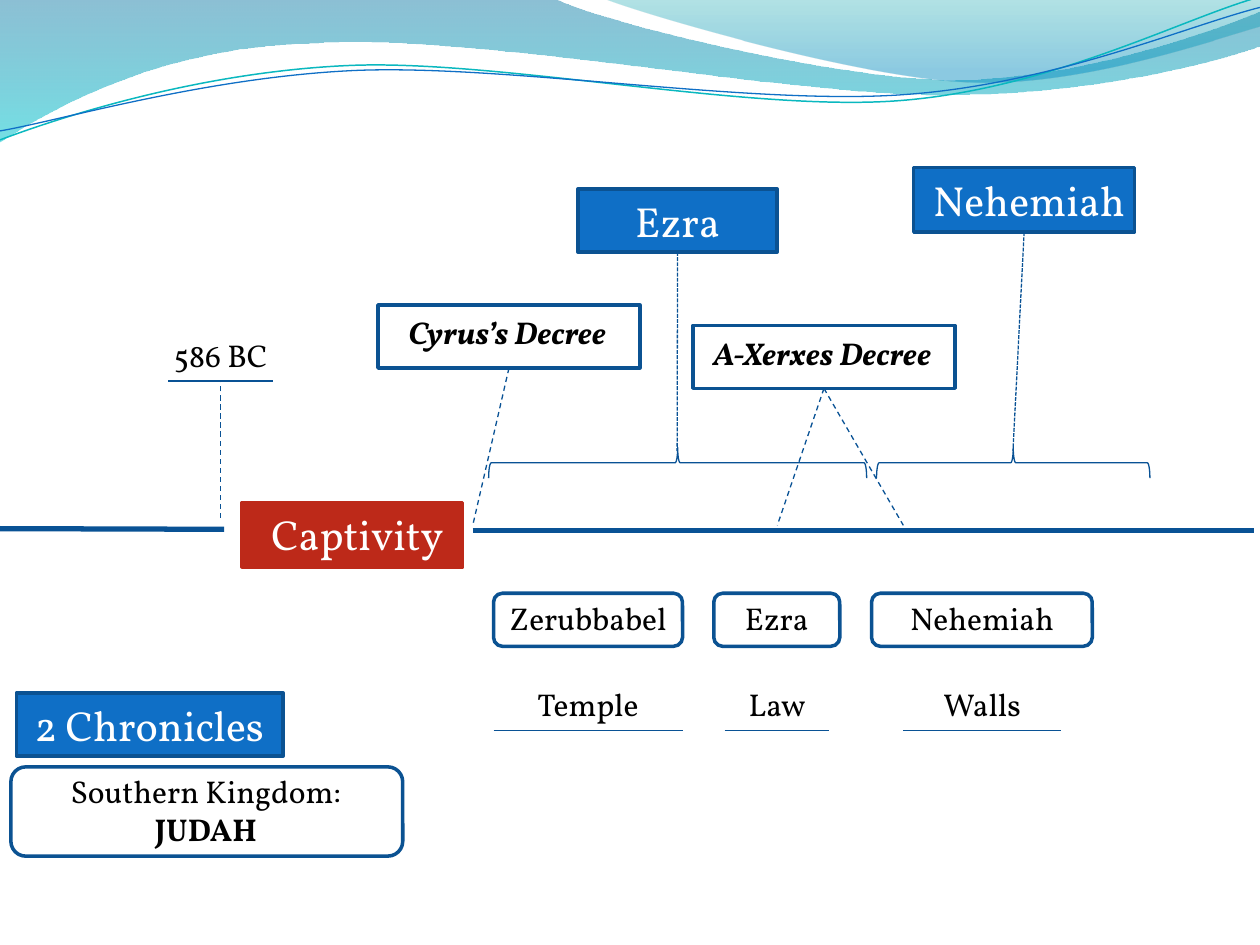
from math import cos, radians, sin

from lxml.etree import SubElement
from pptx import Presentation
from pptx.dml.color import RGBColor
from pptx.enum.dml import MSO_LINE
from pptx.enum.shapes import MSO_CONNECTOR, MSO_SHAPE
from pptx.enum.text import MSO_ANCHOR, MSO_AUTO_SIZE, PP_ALIGN
from pptx.oxml.ns import qn
from pptx.util import Cm, Pt

THEME = {
    "font": "Vollkorn", "header": 24, "body": 18,
    "blue": "0F6FC6", "edge": "0B5292", "rule": "095295", "red": "BD2919",
    "teal": "0AB8BF", "white": "FFFFFF", "black": "000000",
    "thin": 0.75, "medium": 2, "thick": 3,
}
STYLES = {
    "header": {"kind": MSO_SHAPE.RECTANGLE, "fill": "blue", "edge": "edge", "size": "header", "ink": "white"},
    "event": {"kind": MSO_SHAPE.RECTANGLE, "fill": "red", "edge": "red", "size": "header", "ink": "white"},
    "decree": {"kind": MSO_SHAPE.RECTANGLE, "fill": None, "edge": "edge", "size": "body", "ink": "black"},
    "person": {"kind": MSO_SHAPE.ROUNDED_RECTANGLE, "fill": None, "edge": "edge", "size": "body", "ink": "black"},
}
EMPHASIS = {"bold": True, "italic": True}

GRADIENT_WAVES = [
    ([[(0, 0)],
      [(11.18, -0.03)],
      [(12.09, 0.43), (16.87, 1.6), (19.25, 1.6)],
      [(21.67, 1.6), (24.33, 0.66), (25.4, 0.23)],
      [(25.43, 0.91)],
      [(24.97, 1.12), (22.1, 1.93), (18.95, 1.91)],
      [(15.8, 1.91), (9.7, 0.71), (6.53, 0.86)],
      [(3.28, 0.91), (1.17, 2.11), (-0.03, 2.87)]],
     [(0, "0074A1", 45), (1, "00C6CF", 55)]),
    ([[(12.17, -0.03)],
      [(12.93, 0.28), (17.32, 1.57), (19.53, 1.65)],
      [(21.74, 1.75), (24.41, 0.81), (25.4, 0.53)],
      [(25.4, 0)]],
     [(0, "00A1A9", 30), (0.8, "008BBF", 45)]),
]
WAVE_TILT = -2.7
LINE_WAVES = [
    ([[(0, 2.82)],
      [(1.22, 2.36), (4.01, 1.45), (7.04, 1.32)],
      [(10.03, 1.19), (15.06, 2.26), (18.11, 2.03)],
      [(21.16, 1.8), (23.83, 0.38), (25.35, -0.05)]],
     (12.67, 1.46), "teal", 0.85),
    ([[(0, 2.64)],
      [(1.19, 2.44), (4.17, 1.55), (7.19, 1.42)],
      [(10.24, 1.3), (15.16, 2.13), (18.21, 1.91)],
      [(21.23, 1.7), (23.9, 0.53), (25.4, 0.15)]],
     (12.69, 1.5), "blue", 0.75),
]

BOXES = [
    ("Zerubbabel", "person", (9.95, 11.96, 3.81, 1.07), (9.95, 11.96, 3.81, 1.02), [("Zerubbabel", {})]),
    ("Ezra", "person", (14.39, 11.96, 2.54, 1.07), (14.39, 11.96, 2.54, 1.02), [("Ezra", {})]),
    ("Nehemiah", "person", (17.57, 11.96, 4.45, 1.07), (17.57, 11.96, 4.45, 1.8), [("Nehemiah", {})]),
    ("Ezra book", "header", (11.65, 3.81, 4.02, 1.27), (11.65, 3.81, 4.02, 0.89), [("Ezra", {})]),
    ("Nehemiah book", "header", (18.42, 3.38, 4.45, 1.3), (18.42, 3.39, 4.65, 1.3), [("Nehemiah", {})]),
    ("Judah", "person", (0.22, 15.46, 7.9, 1.8), (0.43, 15.44, 7.44, 1.8),
     [("Southern Kingdom:", {}), ("JUDAH", {"bold": True})]),
    ("Chronicles book", "header", (0.33, 13.97, 5.38, 1.27), (0.32, 13.97, 5.38, 1.27), [("2 Chronicles", {})]),
    ("Captivity", "event", (4.88, 10.13, 4.45, 1.3), (4.88, 10.13, 4.65, 1.3), [("Captivity", {})]),
    ("Cyrus", "decree", (7.62, 6.15, 5.28, 1.27), (7.42, 6.18, 5.61, 1.02), [("Cyrus’s Decree", EMPHASIS)]),
    ("Xerxes", "decree", (13.97, 6.56, 5.28, 1.27), (13.77, 6.6, 5.61, 1.02), [("A-Xerxes Decree", EMPHASIS)]),
]
LABELS = [
    ("586 BC", 3.18, 6.64, 2.54, 0.21),
    ("Temple", 9.95, 13.68, 3.81, 0),
    ("Law", 14.61, 13.68, 2.11, 0),
    ("Walls", 18.21, 13.68, 3.18, 0),
]
LABEL_HEIGHT, RULE_DROP = 1.02, 1.04
BRACES = [(9.85, 7.62), (17.67, 5.51)]
BRACE_TOP, BRACE_DEPTH = 9.02, 0.62

TIMELINE = [((-5.51, 10.64), (4.52, 10.67)), ((9.53, 10.69), (25.27, 10.69))]
DATE_MARK = ((4.45, 10.44), (4.45, 7.67))
LEADERS = [
    ("Ezra book", (13.65, 9.09), MSO_LINE.SQUARE_DOT),
    ("Nehemiah book", (20.42, 9.09), MSO_LINE.SQUARE_DOT),
    ("Cyrus", (9.53, 10.59), MSO_LINE.DASH),
    ("Xerxes", (15.67, 10.59), MSO_LINE.DASH),
    ("Xerxes", (18.21, 10.59), MSO_LINE.DASH),
]


def color(name):
    return RGBColor.from_string(THEME[name])


def set_line(shape, name, width, dash=None):
    shape.line.color.rgb = color(name)
    for key, value in {"width": Pt(width), "dash_style": dash}.items():
        setattr(shape.line, key, value)


def add_text(page, place, lines, size, ink):
    box = page.shapes.add_textbox(*map(Cm, place))
    frame = box.text_frame
    layout = {"word_wrap": True, "vertical_anchor": MSO_ANCHOR.TOP, "auto_size": MSO_AUTO_SIZE.SHAPE_TO_FIT_TEXT}
    for key, value in layout.items():
        setattr(frame, key, value)
    for index, (text, emphasis) in enumerate(lines):
        para = frame.add_paragraph() if index else frame.paragraphs[0]
        para.alignment = PP_ALIGN.CENTER
        span = para.add_run()
        span.text = text
        span.font.color.rgb = color(ink)
        for key, value in {"name": THEME["font"], "size": Pt(THEME[size]), **emphasis}.items():
            setattr(span.font, key, value)


def turn(point, center, degrees):
    angle = radians(degrees)
    x, y = point[0] - center[0], point[1] - center[1]
    return center[0] + x * cos(angle) - y * sin(angle), center[1] + x * sin(angle) + y * cos(angle)


def add_wave(page, segments, close):
    points = [tuple(map(Cm, point)) for segment in segments for point in segment]
    builder = page.shapes.build_freeform(*points[0], scale=1.0)
    builder.add_line_segments(points[1:], close=close)
    wave = builder.convert_to_shape()
    wave.shadow.inherit = False
    steps = iter(list(wave._element.iter(qn("a:lnTo"))))
    for segment in segments[1:]:
        first = next(steps)
        if len(segment) == 3:
            first.tag = qn("a:cubicBezTo")
            for _ in range(2):
                control = next(steps)
                first.append(control[0])
                control.getparent().remove(control)
    return wave


def add_line(page, start, end, width="thin", dash=None):
    line = page.shapes.add_connector(MSO_CONNECTOR.STRAIGHT, *map(Cm, (*start, *end)))
    set_line(line, "rule", THEME[width], dash)
    SubElement(line._element.spPr, qn("a:effectLst"))
    return line


def add_box(page, style, place):
    box = page.shapes.add_shape(style["kind"], *map(Cm, place))
    box.shadow.inherit = False
    if style["fill"]:
        box.fill.solid()
        box.fill.fore_color.rgb = color(style["fill"])
    else:
        box.fill.background()
    set_line(box, style["edge"], THEME["medium"])
    return box


def add_brace(page, left, span):
    frame_left = left + (span - BRACE_DEPTH) / 2
    frame_top = BRACE_TOP + (BRACE_DEPTH - span) / 2
    brace = page.shapes.add_shape(MSO_SHAPE.LEFT_BRACE, *map(Cm, (frame_left, frame_top, BRACE_DEPTH, span)))
    brace.rotation = 90
    brace.shadow.inherit = False
    brace.fill.background()
    set_line(brace, "rule", THEME["thin"])


def main():
    deck = Presentation()
    deck.slide_width, deck.slide_height = Cm(25.4), Cm(19.05)
    page = deck.slides.add_slide(deck.slide_layouts[6])

    for segments, stops in GRADIENT_WAVES:
        wave = add_wave(page, segments, True)
        wave.line.fill.background()
        wave.fill.gradient()
        wave.fill.gradient_angle = 270
        for stop, (position, tone, opacity) in zip(wave.fill.gradient_stops, stops):
            stop.position = position
            stop.color.rgb = RGBColor.from_string(tone)
            SubElement(stop._gs[0], qn("a:alpha"), val=str(opacity * 1000))
    for segments, center, tone, width in LINE_WAVES:
        level = [[turn(point, center, -WAVE_TILT) for point in segment] for segment in segments]
        wave = add_wave(page, level, False)
        wave.rotation = WAVE_TILT
        wave.fill.background()
        set_line(wave, tone, width)

    for start, end in TIMELINE:
        add_line(page, start, end, "thick")
    add_line(page, *DATE_MARK, dash=MSO_LINE.DASH)
    for left, span in BRACES:
        add_brace(page, left, span)

    boxes = {}
    for name, style_name, place, text_place, lines in BOXES:
        style = STYLES[style_name]
        boxes[name] = add_box(page, style, place)
        add_text(page, text_place, lines, style["size"], style["ink"])
    for name, end, dash in LEADERS:
        add_line(page, end, end, dash=dash).begin_connect(boxes[name], 2)

    for text, left, top, width, inset in LABELS:
        add_text(page, (left, top, width, LABEL_HEIGHT), [(text, {})], "body", "black")
        base = top + RULE_DROP
        add_line(page, (left + inset, base), (left + width - inset, base))

    deck.save("out.pptx")


if __name__ == "__main__":
    main()
